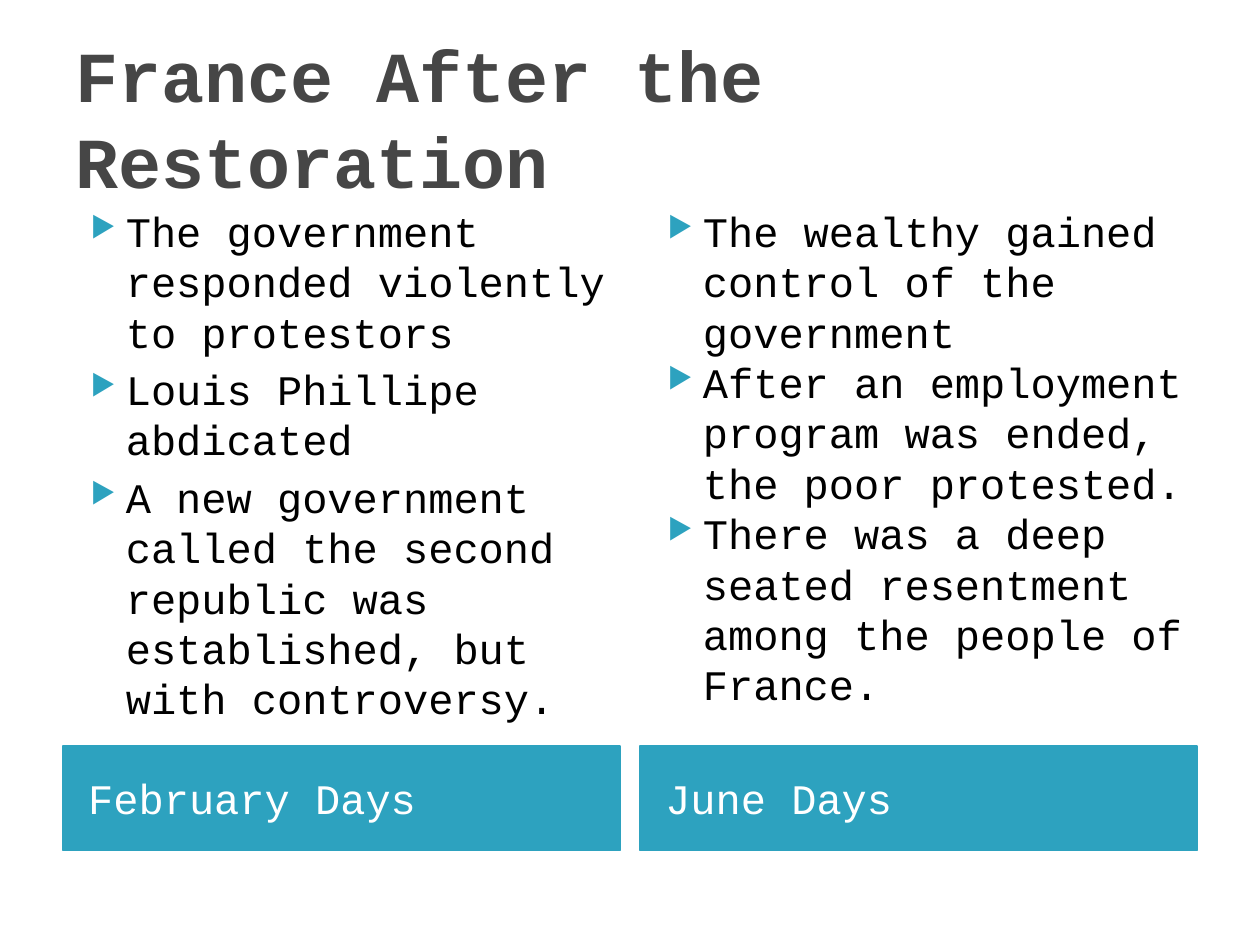
from lxml import etree
from pptx import Presentation
from pptx.dml.color import RGBColor
from pptx.enum.shapes import MSO_SHAPE as Shape
from pptx.enum.text import MSO_ANCHOR as Anchor, PP_ALIGN as Align
from pptx.oxml.ns import qn
from pptx.util import Inches, Pt

TEAL = RGBColor(0x2D, 0xA2, 0xBF)
GRAY = RGBColor(0x46, 0x46, 0x46)
BLACK = RGBColor(0, 0, 0)
WHITE = RGBColor(255, 255, 255)

COLUMN_WIDTH = 4.42
COLUMNS = [
    (0.5, "February Days", 4, [
        "The government responded violently to protestors",
        "Louis Phillipe abdicated",
        "A new government called the second republic was established, but with controversy.",
    ]),
    (5.08, "June Days", 0, [
        "The wealthy gained control of the government",
        "After an employment program was ended, the poor protested.",
        "There was a deep seated resentment among the people of France.",
    ]),
]


def write(paragraph, text, size=24, color=BLACK, bold=False, bullet=False, before=0):
    """Fill a paragraph with formatted text, with an optional triangle bullet."""
    if bullet:
        properties = paragraph._p.get_or_add_pPr()
        properties.set("marL", str(Inches(0.4)))
        properties.set("indent", str(Inches(-0.28)))
        bullet_color = etree.SubElement(properties, qn("a:buClr"))
        etree.SubElement(bullet_color, qn("a:srgbClr"), val=str(TEAL))
        etree.SubElement(properties, qn("a:buSzPct"), val="68000")
        etree.SubElement(properties, qn("a:buChar"), char="▶")
    paragraph.alignment = Align.LEFT
    if before:
        paragraph.space_before = Pt(before)
    run = paragraph.add_run()
    run.text = text
    run.font.name = "Courier New"
    run.font.size = Pt(size)
    run.font.bold = bold
    run.font.color.rgb = color


presentation = Presentation()
presentation.slide_width = Inches(10)
presentation.slide_height = Inches(7.5)
slide = presentation.slides.add_slide(presentation.slide_layouts[6])

# Title
title = slide.shapes.add_textbox(Inches(0.5), Inches(0.3), Inches(9), Inches(1.25))
title.text_frame.word_wrap = True
title.text_frame.vertical_anchor = Anchor.MIDDLE
write(title.text_frame.paragraphs[0], "France After the Restoration",
      size=41, color=GRAY, bold=True)

for left, heading, gap, points in COLUMNS:
    # Heading bar below the column
    bar = slide.shapes.add_shape(Shape.RECTANGLE, Inches(left), Inches(5.92),
                                 Inches(COLUMN_WIDTH), Inches(0.83))
    bar.shadow.inherit = False
    bar.fill.solid()
    bar.fill.fore_color.rgb = TEAL
    bar.line.color.rgb = TEAL
    bar.line.width = Pt(0.75)
    bar.text_frame.word_wrap = True
    bar.text_frame.vertical_anchor = Anchor.MIDDLE
    bar.text_frame.margin_left = Inches(0.2)
    write(bar.text_frame.paragraphs[0], heading, color=WHITE)

    # Bullet list
    body = slide.shapes.add_textbox(Inches(left), Inches(1.58),
                                    Inches(COLUMN_WIDTH), Inches(4.31))
    frame = body.text_frame
    frame.word_wrap = True
    for index, point in enumerate(points):
        paragraph = frame.add_paragraph() if index else frame.paragraphs[0]
        write(paragraph, point, bullet=True, before=gap if index else 0)

presentation.save("out.pptx")
